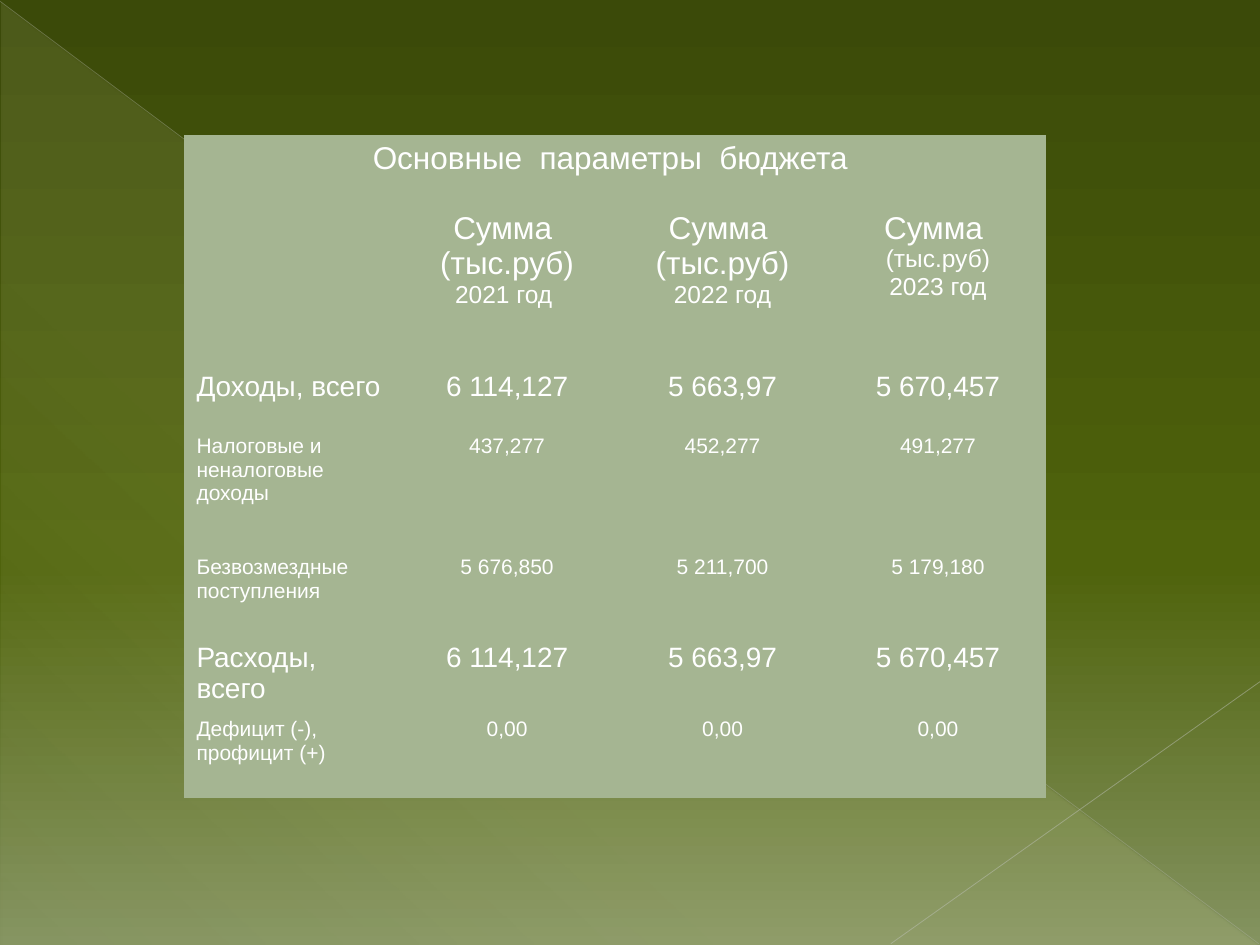
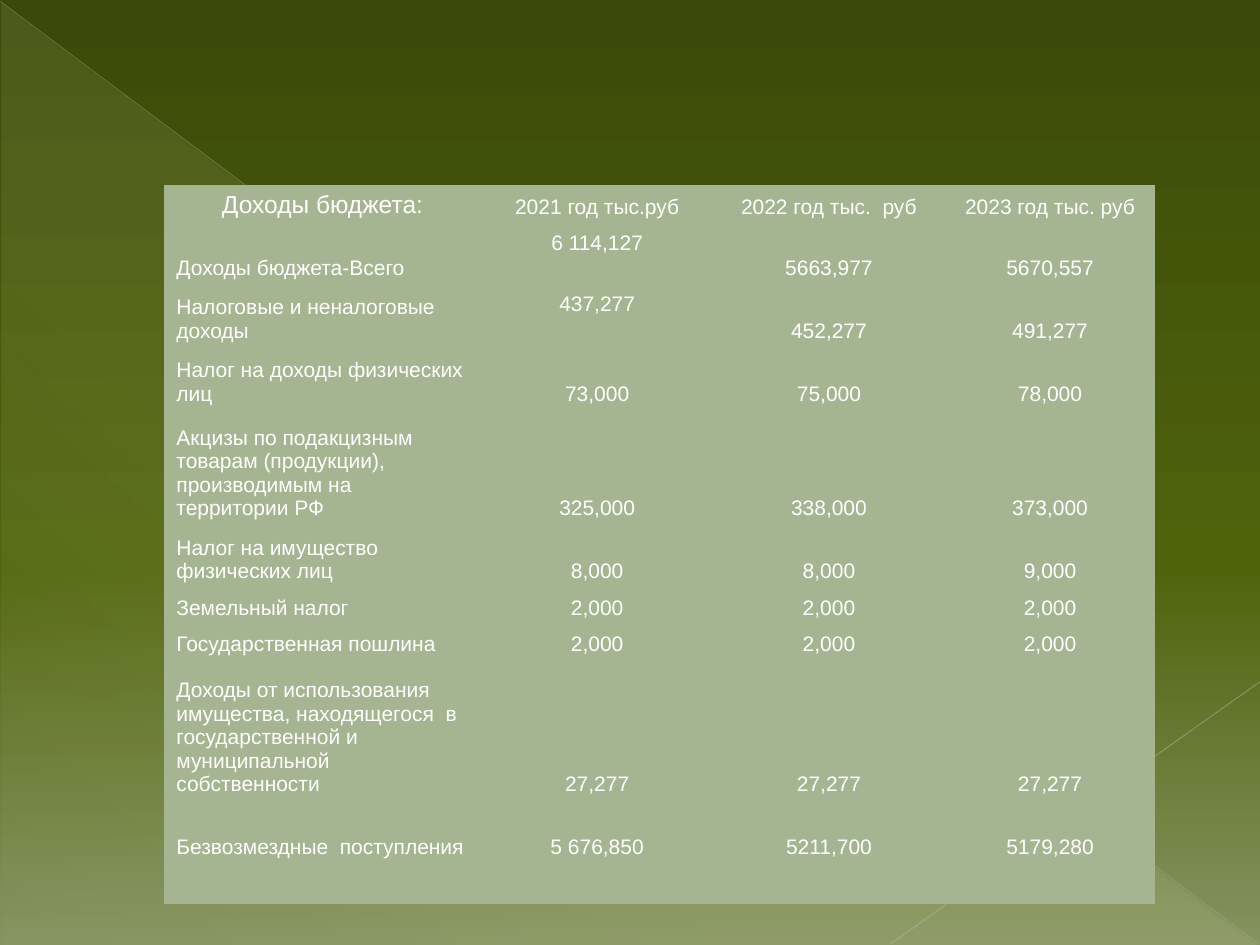
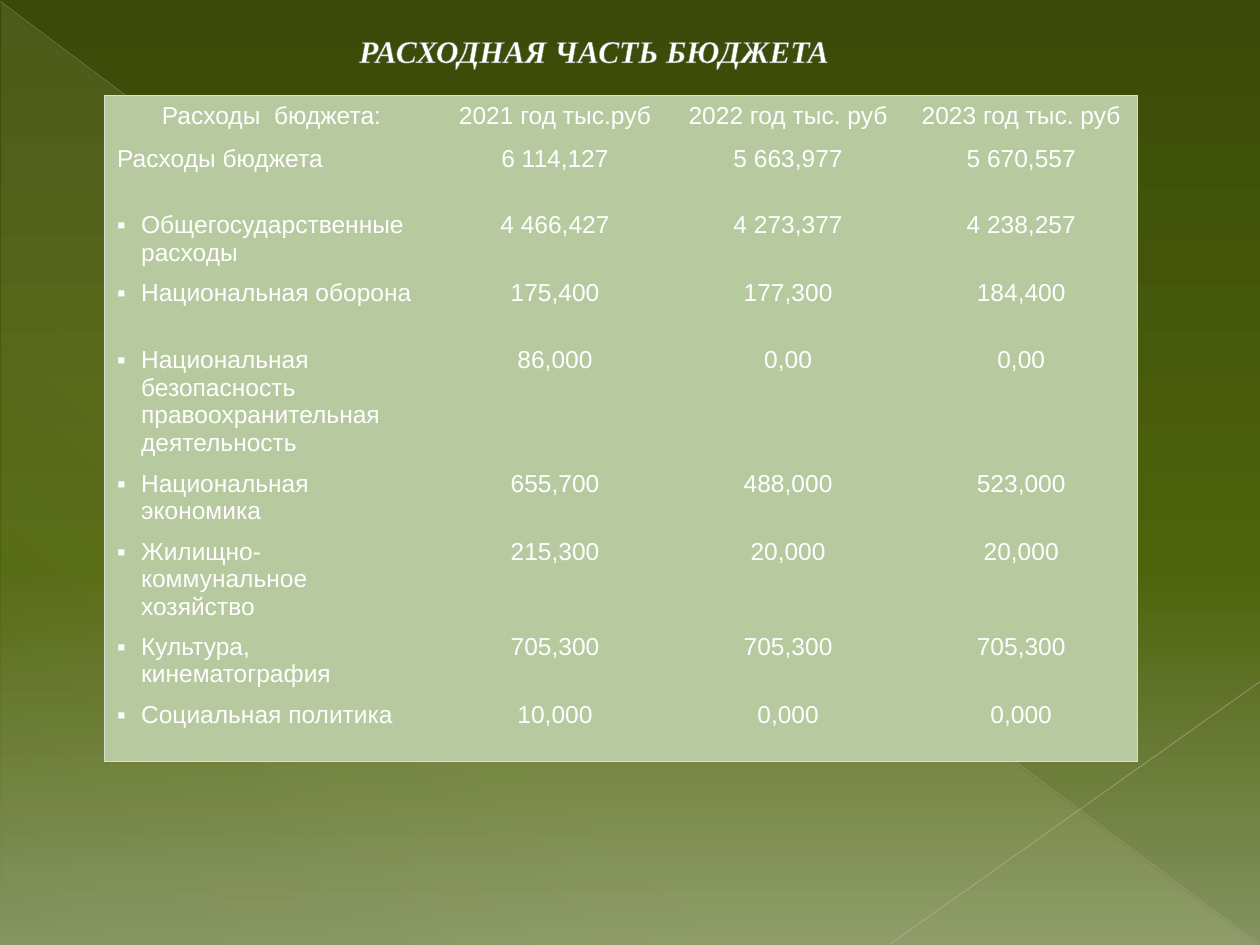
from lxml import etree
from pptx import Presentation
from pptx.dml.color import RGBColor
from pptx.enum.shapes import MSO_CONNECTOR, MSO_SHAPE
from pptx.enum.text import MSO_ANCHOR, MSO_AUTO_SIZE, PP_ALIGN
from pptx.oxml.ns import qn
from pptx.util import Inches, Pt

LEFT, CENTER = PP_ALIGN.LEFT, PP_ALIGN.CENTER
TOP, BOTTOM = MSO_ANCHOR.TOP, MSO_ANCHOR.BOTTOM
STRAIGHT = MSO_CONNECTOR.STRAIGHT
RIGHT_TRIANGLE = MSO_SHAPE.RIGHT_TRIANGLE
NO_AUTOFIT = MSO_AUTO_SIZE.NONE
NO_TABLE_STYLE = "{2D5ABB26-0587-4C30-8999-92F81FD0307C}"
TITLE_ONLY, BLANK = 5, 6

COLORS = {
    "dark": "3B4A09",
    "green": "4F630C",
    "light": "849360",
    "cream": "FEFAC9",
    "long_line": "BABDB3",
    "short_line": "C1C4BC",
    "text": "FFFFFF",
    "outline": "727D65",
    "table": "A5B592",
    "expense_table": "B6C99F",
    "border": "D8DFD1",
}


def add_color(parent, name, alpha=100):
    color = etree.SubElement(parent, qn("a:srgbClr"), val=COLORS[name])
    if alpha < 100:
        etree.SubElement(color, qn("a:alpha"), val=str(alpha * 1000))


def set_gradient(fill, element, stops, angle):
    fill.gradient()
    gradient = element.xpath(".//a:gradFill")[0]
    stop_list = gradient.find(qn("a:gsLst"))
    for stop in list(stop_list):
        stop_list.remove(stop)
    for position, name, alpha in stops:
        stop = etree.SubElement(stop_list, qn("a:gs"), pos=str(position * 1000))
        add_color(stop, name, alpha)
    gradient.find(qn("a:lin")).set("ang", str(angle * 60000))


presentation = Presentation()
presentation.slide_width = Inches(10)
presentation.slide_height = Inches(7.5)
master = presentation.slide_master

tables = [
    {
        "layout": BLANK,
        "position": (1.46, 1.07),
        "columns": [1.71] * 4,
        "fill": "table",
        "anchor": TOP,
        "sizes": {(1, 1): [18, 18, 14], (1, 2): [18, 18, 14], (1, 3): [18, 14, 14]},
        "merge_header": True,
        "rows": [
            (0.55, 18, ["Основные  параметры  бюджета ", "", "", ""]),
            (1.28, 18, ["", "Сумма \n(тыс.руб)\n2021 год ", "Сумма \n(тыс.руб)\n2022 год",
                        "Сумма \n(тыс.руб)\n2023 год"]),
            (0.5, 16, ["Доходы, всего", "6 114,127", "5 663,97", "5 670,457"]),
            (0.96, 12, ["Налоговые и неналоговые доходы", "437,277", "452,277", "491,277"]),
            (0.69, 12, ["Безвозмездные  поступления", "5 676,850", "5 211,700", "5 179,180"]),
            (0.59, 16, ["Расходы, всего", "6 114,127", "5 663,97", "5 670,457"]),
            (0.69, 12, ["Дефицит (-), профицит (+)", "0,00", "0,00", "0,00"]),
        ],
    },
    {
        "layout": BLANK,
        "position": (1.3, 1.47),
        "columns": [2.52, 1.84, 1.84, 1.67],
        "fill": "table",
        "anchor": BOTTOM,
        "sizes": {(0, 0): [14]},
        "top_cells": [(1, 1), (2, 1)],
        "rows": [
            (0.31, 12, ["Доходы бюджета:", "2021 год тыс.руб", "2022 год тыс.  руб", "2023 год тыс. руб"]),
            (0.48, 12, ["Доходы бюджета-Всего", "6 114,127", "5663,977", "5670,557"]),
            (0.5, 12, ["Налоговые и неналоговые  доходы", "437,277", "452,277", "491,277"]),
            (0.5, 12, ["Налог на доходы физических лиц", "73,000", "75,000", "78,000"]),
            (0.91, 12, ["Акцизы по подакцизным товарам (продукции), производимым на территории РФ",
                        "325,000", "338,000", "373,000"]),
            (0.5, 12, ["Налог на имущество физических лиц", "8,000", "8,000", "9,000"]),
            (0.29, 12, ["Земельный налог", "2,000", "2,000", "2,000"]),
            (0.29, 12, ["Государственная пошлина", "2,000", "2,000", "2,000"]),
            (1.11, 12, ["Доходы от использования имущества, находящегося  в государственной и "
                        "муниципальной собственности", "27,277", "27,277", "27,277"]),
            (0.5, 12, ["Безвозмездные  поступления", "5 676,850", "5211,700", "5179,280"]),
            (0.29, 12, ["", "", "", ""]),
        ],
    },
    {
        "layout": TITLE_ONLY,
        "title": "РАСХОДНАЯ ЧАСТЬ БЮДЖЕТА",
        "position": (0.83, 0.76),
        "columns": [2.65, 1.85, 1.85, 1.85],
        "fill": "expense_table",
        "anchor": TOP,
        "bullets_from": 2,
        "border": True,
        "rows": [
            (0.34, 14, ["Расходы  бюджета:", "2021 год тыс.руб", "2022 год тыс. руб", "2023 год тыс. руб"]),
            (0.53, 14, ["Расходы бюджета", "6 114,127", "5 663,977", "5 670,557"]),
            (0.54, 14, ["Общегосударственные расходы", "4 466,427", "4 273,377", "4 238,257"]),
            (0.53, 14, ["Национальная оборона", "175,400", "177,300", "184,400"]),
            (0.98, 14, ["Национальная безопасность правоохранительная деятельность",
                        "86,000", "0,00", "0,00"]),
            (0.54, 14, ["Национальная  экономика", "655,700", "488,000", "523,000"]),
            (0.75, 14, ["Жилищно-коммунальное хозяйство", "215,300", "20,000", "20,000"]),
            (0.54, 14, ["Культура, кинематография", "705,300", "705,300", "705,300"]),
            (0.53, 14, ["Социальная политика", "10,000", "0,000", "0,000"]),
        ],
    },
]

slides = [presentation.slides.add_slide(presentation.slide_layouts[data["layout"]]) for data in tables]

set_gradient(master.background.fill, master._element.xpath(".//p:bg")[0],
             [(0, "dark", 100), (60, "green", 100), (100, "light", 100)], 90)

triangle = slides[0].shapes.add_shape(
    RIGHT_TRIANGLE, Inches(0.01), Inches(0.02), Inches(9.98), Inches(7.48))
triangle.shadow.inherit = False
triangle.line.fill.background()
set_gradient(triangle.fill, triangle._element,
             [(0, "cream", 10), (70, "cream", 8), (100, "cream", 1)], 133)
decorations = [triangle]
for start_x, start_y, end_x, end_y, color, width, alpha in [
    (0, 0.01, 9.99, 7.49, "long_line", 0.39, 35),
    (10, 5.41, 7.07, 7.49, "short_line", 0.47, 45),
]:
    connector = slides[0].shapes.add_connector(
        STRAIGHT, Inches(start_x), Inches(start_y), Inches(end_x), Inches(end_y))
    connector.line.width = Pt(width)
    connector.line.color.rgb = RGBColor.from_string(COLORS[color])
    etree.SubElement(connector._element.xpath(".//a:ln//a:srgbClr")[0], qn("a:alpha"), val=str(alpha * 1000))
    etree.SubElement(connector._element.spPr, qn("a:effectLst"))
    decorations.append(connector)
for index, shape in enumerate(decorations):
    master.shapes._spTree.insert(2 + index, shape._element)

for slide, data in zip(slides, tables):
    if "title" in data:
        title = slide.shapes.title
        for name, value in {"left": 2.55, "top": 0.21, "width": 7.45, "height": 0.39}.items():
            setattr(title, name, Inches(value))
        frame = title.text_frame
        frame.word_wrap = True
        frame.auto_size = NO_AUTOFIT
        frame.vertical_anchor = BOTTOM
        paragraph = frame.paragraphs[0]
        paragraph.alignment = LEFT
        paragraph._p.get_or_add_pPr().set("marL", str(Inches(0.2)))
        run = paragraph.add_run()
        run.text = data["title"]
        for name, value in {"name": "Times New Roman", "size": Pt(18), "bold": True, "italic": True}.items():
            setattr(run.font, name, value)
        run.font.color.rgb = RGBColor.from_string(COLORS["text"])
        outline = etree.Element(qn("a:ln"), w=str(Pt(0.5)))
        add_color(etree.SubElement(outline, qn("a:solidFill")), "outline")
        run._r.get_or_add_rPr().insert(0, outline)

    rows, columns = data["rows"], data["columns"]
    left, top = data["position"]
    table = slide.shapes.add_table(
        len(rows), len(columns), Inches(left), Inches(top),
        Inches(sum(columns)), Inches(sum(row[0] for row in rows))).table
    table.first_row = table.horz_banding = False
    table._tbl.tblPr.find(qn("a:tableStyleId")).text = NO_TABLE_STYLE
    for column, width in zip(table.columns, columns):
        column.width = Inches(width)

    for row_index, (height, size, texts) in enumerate(rows):
        table.rows[row_index].height = Inches(height)
        for column_index, text in enumerate(texts):
            place = (row_index, column_index)
            cell = table.cell(*place)
            cell.fill.solid()
            cell.fill.fore_color.rgb = RGBColor.from_string(COLORS[data["fill"]])
            cell.vertical_anchor = TOP if place in data.get("top_cells", []) else data["anchor"]
            cell.text = text
            sizes = data.get("sizes", {}).get(place, [size] * len(cell.text_frame.paragraphs))
            for paragraph, text_size in zip(cell.text_frame.paragraphs, sizes):
                paragraph.alignment = LEFT if column_index == 0 and row_index > 0 else CENTER
                for run in paragraph.runs:
                    run.font.name = "Arial"
                    run.font.size = Pt(text_size)
                    run.font.color.rgb = RGBColor.from_string(COLORS["text"])
                if not text:
                    etree.SubElement(paragraph._p, qn("a:endParaRPr"), sz=str(text_size * 100))
                if column_index == 0 and row_index >= data.get("bullets_from", len(rows)):
                    properties = paragraph._p.get_or_add_pPr()
                    properties.set("marL", str(Inches(0.19)))
                    properties.set("indent", str(-Inches(0.19)))
                    etree.SubElement(properties, qn("a:buFont"), typeface="Arial")
                    etree.SubElement(properties, qn("a:buChar"), char="▪")
            if data.get("border"):
                edges = {
                    "a:lnL": column_index == 0,
                    "a:lnR": column_index == len(columns) - 1,
                    "a:lnT": row_index == 0,
                    "a:lnB": row_index == len(rows) - 1,
                }
                outer_edges = [tag for tag, outer in edges.items() if outer]
                for edge_index, tag in enumerate(outer_edges):
                    edge = etree.Element(qn(tag), w=str(Pt(0.75)))
                    add_color(etree.SubElement(edge, qn("a:solidFill")), "border")
                    cell._tc.get_or_add_tcPr().insert(edge_index, edge)
    if data.get("merge_header"):
        table.cell(0, 0).merge(table.cell(0, len(columns) - 1))

presentation.save("out.pptx")
